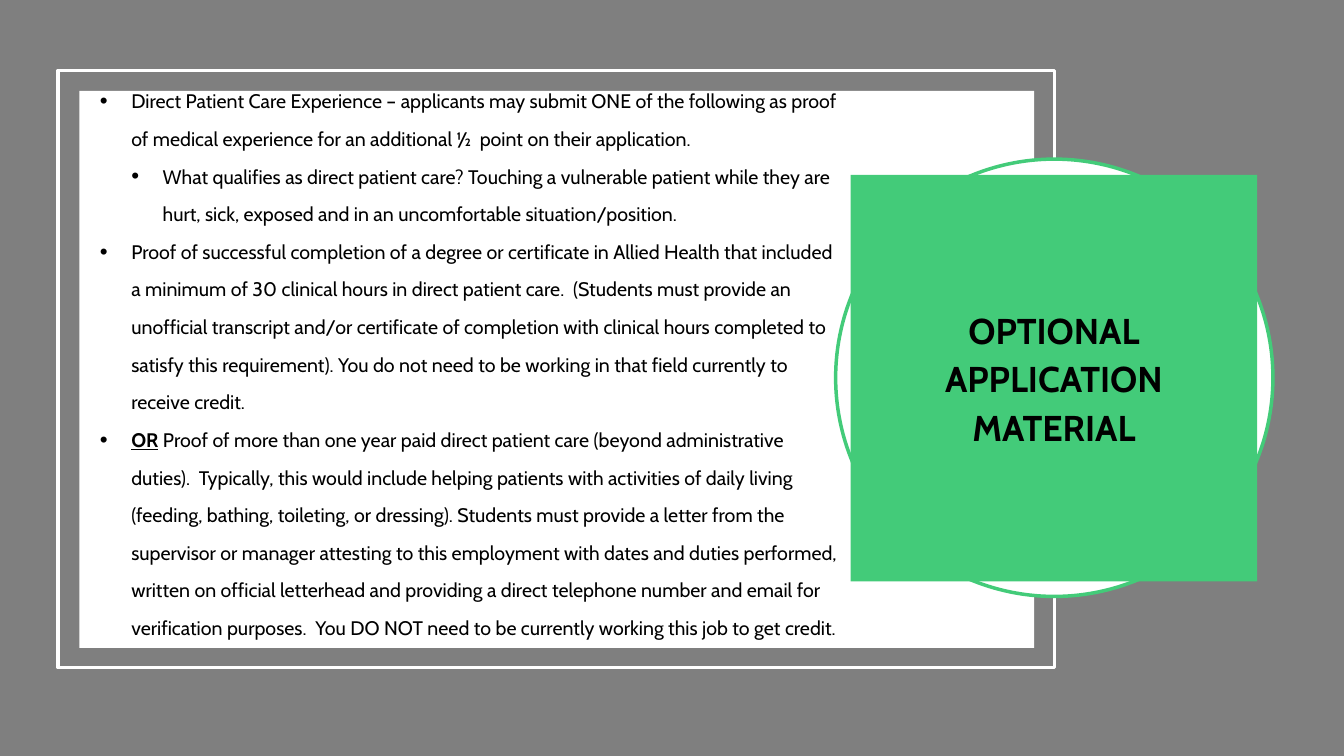
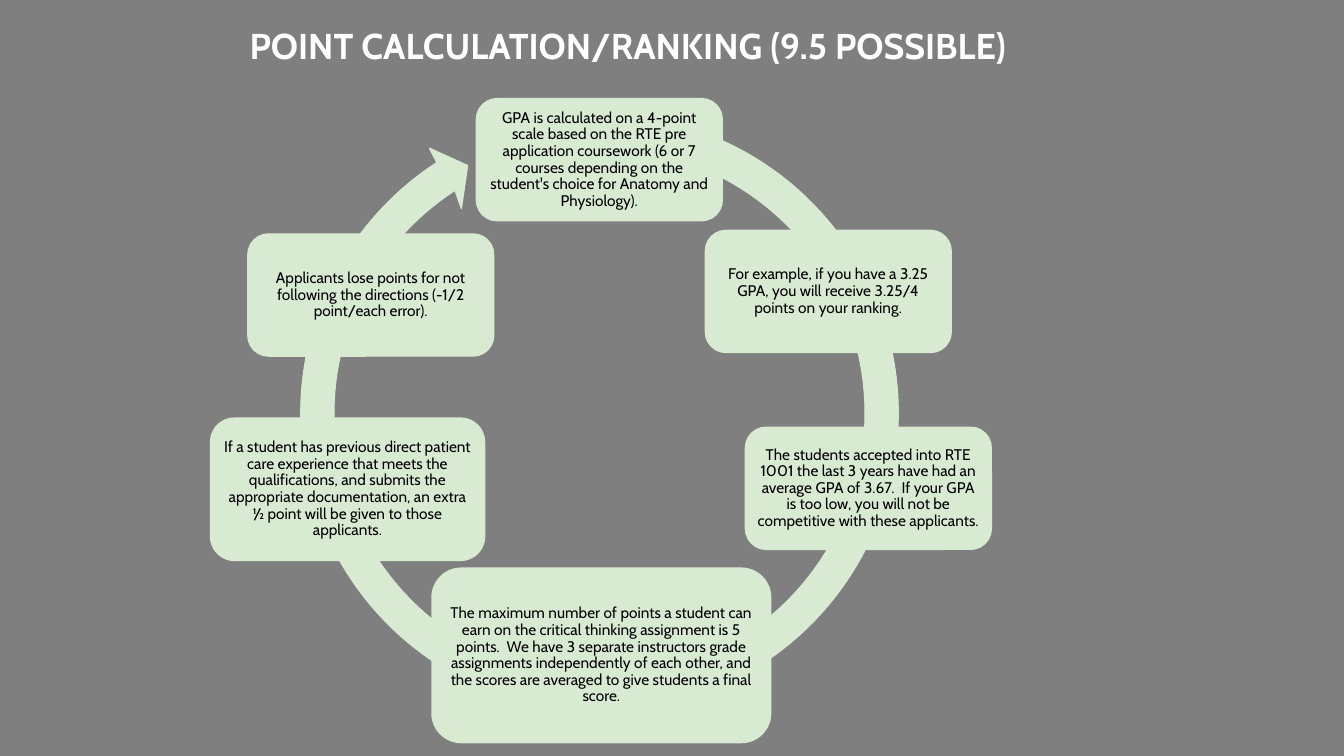
from dataclasses import dataclass
from math import cos, radians, sin, tan

from lxml.etree import SubElement
from pptx import Presentation
from pptx.dml.color import RGBColor
from pptx.enum.shapes import MSO_SHAPE
from pptx.enum.text import MSO_ANCHOR, PP_ALIGN
from pptx.oxml.ns import qn
from pptx.util import Cm, Pt


@dataclass(frozen=True)
class Theme:
    font: str = "Cabin"
    gray: RGBColor = RGBColor(0x7F, 0x7F, 0x7F)
    white: RGBColor = RGBColor(0xFF, 0xFF, 0xFF)
    black: RGBColor = RGBColor(0x00, 0x00, 0x00)
    green: RGBColor = RGBColor(0x43, 0xCB, 0x79)
    mint: RGBColor = RGBColor(0xD9, 0xEA, 0xD3)
    title_size: int = 32
    body_size: int = 14
    card_size: int = 11


def arc_points(center, radius, start, end, pieces=4):
    step = radians(end - start) / pieces
    reach = 4 / 3 * tan(step / 4)

    def point(angle, pull):
        return (center[0] + radius * (sin(angle) + pull * cos(angle)),
                center[1] - radius * (cos(angle) - pull * sin(angle)))

    points = [point(radians(start), 0)]
    for piece in range(pieces):
        angle = radians(start) + piece * step
        points += [point(angle, reach), point(angle + step, -reach), point(angle + step, 0)]
    return points


class SlideBuilder:
    def __init__(self, deck, theme):
        self.deck = deck
        self.theme = theme
        self.page = None

    def new_page(self):
        self.page = self.deck.slides.add_slide(self.deck.slide_layouts[6])
        fill = self.page.background.fill
        fill.solid()
        fill.fore_color.rgb = self.theme.gray

    def paint(self, shape, fill=None, line=None, width=0):
        shape.shadow.inherit = False
        if fill is None:
            shape.fill.background()
        else:
            shape.fill.solid()
            shape.fill.fore_color.rgb = fill
        if line is None:
            shape.line.fill.background()
        else:
            shape.line.color.rgb = line
            shape.line.width = Pt(width)

    def shape(self, kind, place, fill=None, line=None, width=0):
        shape = self.page.shapes.add_shape(kind, *map(Cm, place))
        self.paint(shape, fill, line, width)
        return shape

    def frame(self, box, side, top):
        frame = box.text_frame
        frame.word_wrap = True
        frame.vertical_anchor = MSO_ANCHOR.MIDDLE
        frame.margin_left = frame.margin_right = Cm(side)
        frame.margin_top = frame.margin_bottom = Cm(top)
        return frame

    def style(self, para, size, color, spacing, align, bold=None):
        para.alignment = align
        para.line_spacing = spacing
        para.font.name = self.theme.font
        para.font.size = Pt(size)
        para.font.color.rgb = color
        para.font.bold = bold

    def title(self, text, place, color, fill, side, top):
        box = self.shape(MSO_SHAPE.RECTANGLE, place, fill)
        para = self.frame(box, side, top).paragraphs[0]
        self.style(para, self.theme.title_size, color, 0.9, PP_ALIGN.CENTER, True)
        span = para.add_run()
        span.text = text
        span.font._element.set("cap", "small")

    def bullets(self, items, place):
        box = self.page.shapes.add_textbox(*map(Cm, place))
        frame = self.frame(box, 0.25, 0.13)
        for index, (indent, lead, text) in enumerate(items):
            para = frame.add_paragraph() if index else frame.paragraphs[0]
            self.style(para, self.theme.body_size, self.theme.black, 1.6, PP_ALIGN.LEFT)
            self.bullet(para, indent)
            if lead:
                span = para.add_run()
                span.text = lead
                span.font.bold = span.font.underline = True
            para.add_run().text = text

    def bullet(self, para, indent):
        properties = para._p.get_or_add_pPr()
        properties.set("marL", str(Cm(indent)))
        properties.set("indent", str(Cm(-0.79)))
        color = SubElement(properties, qn("a:buClr"))
        SubElement(color, qn("a:srgbClr"), val=str(self.theme.black))
        SubElement(properties, qn("a:buSzPct"), val="114000")
        SubElement(properties, qn("a:buFont"), typeface="Arial")
        SubElement(properties, qn("a:buChar"), char="•")
        defaults = properties.find(qn("a:defRPr"))
        if defaults is not None:
            properties.append(defaults)

    def card(self, text, place):
        mint = self.theme.mint
        box = self.shape(MSO_SHAPE.ROUNDED_RECTANGLE, place, mint, mint, 1.75)
        para = self.frame(box, 0.1, 0.1).paragraphs[0]
        para.text = text
        self.style(para, self.theme.card_size, self.theme.black, 0.9, PP_ALIGN.CENTER)

    def ring_arrow(self, center, outer_radius, inner_radius, start, end, head):
        outer = arc_points(center, outer_radius, start, end)
        inner = arc_points(center, inner_radius, end, start)
        points = [(Cm(x), Cm(y)) for x, y in outer + head + inner]
        builder = self.page.shapes.build_freeform(*points[0])
        builder.add_line_segments(points[1:], close=True)
        arrow = builder.convert_to_shape()
        self.paint(arrow, self.theme.mint, self.theme.mint, 0.75)
        outline = next(arrow._element.iter(qn("a:path")))
        lines = outline.findall(qn("a:lnTo"))
        inner_first = len(outer) + len(head)
        self.curve(outline, lines[:len(outer) - 1])
        self.curve(outline, lines[inner_first:])

    def curve(self, outline, lines):
        for first in range(0, len(lines), 3):
            bezier = SubElement(outline, qn("a:cubicBezTo"))
            lines[first].addprevious(bezier)
            for line in lines[first:first + 3]:
                bezier.append(line[0])
                outline.remove(line)


REQUIREMENTS = [
    (1.27, "", "Direct Patient Care Experience – applicants may submit ONE of the following "
     "as proof of medical experience for an additional ½  point on their application."),
    (2.06, "", "What qualifies as direct patient care? Touching a vulnerable patient while "
     "they are hurt, sick, exposed and in an uncomfortable situation/position."),
    (1.27, "", "Proof of successful completion of a degree or certificate in Allied Health "
     "that included a minimum of 30 clinical hours in direct patient care.  (Students must "
     "provide an unofficial transcript and/or certificate of completion with clinical hours "
     "completed to satisfy this requirement). You do not need to be working in that field "
     "currently to receive credit."),
    (1.27, "OR", " Proof of more than one year paid direct patient care (beyond "
     "administrative duties).  Typically, this would include helping patients with "
     "activities of daily living (feeding, bathing, toileting, or dressing). Students must "
     "provide a letter from the supervisor or manager attesting to this employment with "
     "dates and duties performed, written on official letterhead and providing a direct "
     "telephone number and email for verification purposes.  You DO NOT need to be "
     "currently working this job to get credit."),
]

CARD_SIZE = (6.17, 3.05)
RANKING_STEPS = [
    ((12.02, 2.5), CARD_SIZE,
     "GPA is calculated on a 4-point scale based on the RTE pre application coursework "
     "(6 or 7 courses depending on the student's choice for Anatomy and Physiology)."),
    ((17.79, 5.82), CARD_SIZE,
     "For example, if you have a 3.25 GPA, you will receive 3.25/4 points on your ranking."),
    ((18.8, 10.78), CARD_SIZE,
     "The students accepted into RTE 1001 the last 3 years have had an average GPA of "
     "3.67.  If your GPA is too low, you will not be competitive with these applicants."),
    ((10.9, 14.33), (8.51, 4.37),
     "The maximum number of points a student can earn on the critical thinking assignment "
     "is 5 points.  We have 3 separate instructors grade assignments independently of each "
     "other, and the scores are averaged to give students a final score."),
    ((5.32, 10.55), (6.88, 3.56),
     "If a student has previous direct patient care experience that meets the "
     "qualifications, and submits the appropriate documentation, an extra ½ point will be "
     "given to those applicants."),
    ((6.26, 5.91), CARD_SIZE,
     "Applicants lose points for not following the directions (-1/2 point/each error)."),
]


def build_optional_material(builder):
    theme = builder.theme
    builder.new_page()
    builder.shape(MSO_SHAPE.RECTANGLE, (1.46, 1.78, 25.12, 15.04), None, theme.white, 2.5)
    builder.shape(MSO_SHAPE.RECTANGLE, (2, 2.29, 24.06, 14.04), theme.white)
    builder.shape(MSO_SHAPE.OVAL, (21.06, 4.01, 11.02, 11.02), theme.white, theme.green, 2.5)
    builder.title("optional application material", (21.44, 4.41, 10.24, 10.24),
                  theme.black, theme.green, 0.51, 0.51)
    builder.bullets(REQUIREMENTS, (1.79, 1.93, 19.66, 14.15))


def build_ranking(builder):
    theme = builder.theme
    builder.new_page()
    builder.ring_arrow((15.11, 10.41), 7.53, 6.69, 16, 327,
                       [(10.82, 3.73), (11.79, 4.17), (11.63, 5.26)])
    for position, size, text in RANKING_STEPS:
        builder.card(text, position + size)
    builder.title("point calculation/ranking (9.5 possible)", (1.85, 0.14, 27.94, 2),
                  theme.white, theme.gray, 0.25, 0.13)


def main():
    deck = Presentation()
    deck.slide_width, deck.slide_height = Cm(33.87), Cm(19.05)
    builder = SlideBuilder(deck, Theme())
    build_optional_material(builder)
    build_ranking(builder)
    deck.save("out.pptx")


if __name__ == "__main__":
    main()
